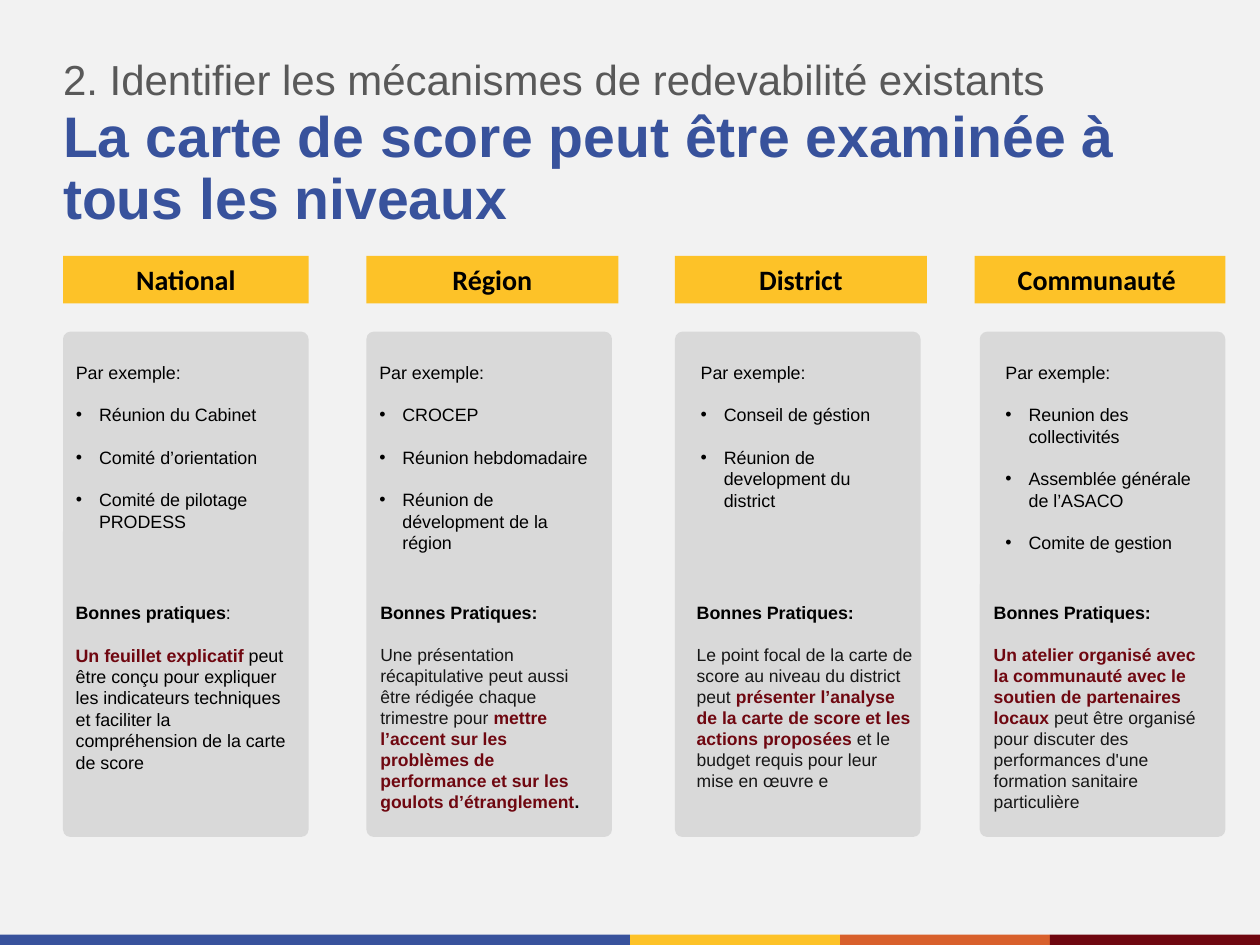
import pptx
import pptx.util
from pptx.dml.color import RGBColor
from pptx.enum.shapes import MSO_SHAPE
from pptx.enum.text import MSO_ANCHOR, MSO_AUTO_SIZE, PP_ALIGN
from pptx.oxml.ns import qn
from lxml import etree

WIDE, HIGH = pptx.util.Inches(9.8), pptx.util.Inches(7.35)
BLUE = RGBColor(0x38, 0x52, 0x9C)
GOLD = RGBColor(0xFD, 0xC2, 0x28)
RUST = RGBColor(0xD8, 0x60, 0x2C)
WINE = RGBColor(0x6F, 0x07, 0x10)
PALE = RGBColor(0xF2, 0xF2, 0xF2)
GREY = RGBColor(0xD9, 0xD9, 0xD9)
SLATE = RGBColor(0x59, 0x59, 0x59)
INK = RGBColor(0x16, 0x16, 0x16)
BLACK = RGBColor(0, 0, 0)

# All lengths are percent of the slide's width or height.
EDGE, CARD = 5, 19.49
HEAD_TOP, CARD_TOP, LIST_TOP, NOTE_TOP = 27.07, 35.1, 37.55, 63
GAP = pptx.util.Pt(11.8)

# Head: left, width, text. List: left, width, items.
# Note: left, size, colour, title runs, text runs; a run is (text, strong colour or None).
LEVELS = [
    dict(card=EDGE, head=(EDGE, CARD, "National"),
         list=(EDGE, CARD, ["Réunion du Cabinet", "Comité d’orientation",
                            "Comité de pilotage PRODESS"]),
         note=(EDGE, 10, BLACK, [("Bonnes pratiques", BLACK), (":", None)],
               [("Un feuillet explicatif ", WINE),
                ("peut être conçu pour expliquer les indicateurs techniques et "
                 "faciliter la compréhension de la carte de score", None)])),
    dict(card=29.08, head=(29.08, 20, "Région"),
         list=(29.08, CARD, ["CROCEP", "Réunion hebdomadaire",
                             "Réunion de dévelopment de la région"]),
         note=(29.18, 9.8, INK, [("Bonnes Pratiques:", BLACK)],
               [("Une présentation récapitulative peut aussi être rédigée "
                 "chaque trimestre pour ", None),
                ("mettre l’accent sur les problèmes de performance et sur les "
                 "goulots d’étranglement", WINE), (".", BLACK)])),
    dict(card=53.57, head=(53.57, 20, "District"),
         list=(54.59, 17.14, ["Conseil de géstion",
                              "Réunion de development du district"]),
         note=(54.29, 9.8, INK, [("Bonnes Pratiques:", BLACK)],
               [("Le point focal de la carte de score au niveau du district "
                 "peut ", None),
                ("présenter l’analyse de la carte de score et les actions "
                 "proposées ", WINE),
                ("et le budget requis pour leur mise en œuvre e", None)])),
    dict(card=77.76, head=(77.35, 19.9, "Communauté "),
         list=(78.78, 17.14, ["Reunion des collectivités",
                              "Assemblée générale de l’ASACO",
                              "Comite de gestion"]),
         note=(77.86, 9.8, INK, [("Bonnes Pratiques:", BLACK)],
               [("Un atelier organisé avec la communauté avec le soutien de "
                 "partenaires locaux", WINE),
                (" peut être organisé pour discuter des performances d'une "
                 "formation sanitaire particulière", None)])),
]


def area(left, top, width, height):
    """Turn percent shares into slide lengths."""
    return (int(WIDE * left / 100), int(HIGH * top / 100),
            int(WIDE * width / 100), int(HIGH * height / 100))


def move(shape, *shares):
    shape.left, shape.top, shape.width, shape.height = area(*shares)


def style(para, size, color, bold=False, face="Arial"):
    font = para.font
    font.name, font.size, font.bold = face, pptx.util.Pt(size), bold
    font.color.rgb = color


def setup(frame, inset=True):
    """Wrap the text from the top of a fixed box."""
    frame.word_wrap = True
    frame.auto_size = MSO_AUTO_SIZE.NONE
    frame.vertical_anchor = MSO_ANCHOR.TOP
    if not inset:
        frame.margin_left = frame.margin_right = 0
        frame.margin_top = frame.margin_bottom = 0


def add_block(slide, kind, color, *shares):
    block = slide.shapes.add_shape(kind, *area(*shares))
    block.shadow.inherit = False
    block.fill.solid()
    block.fill.fore_color.rgb = color
    block.line.fill.background()
    return block


def add_bands(slide):
    third = 50 / 3
    spans = [(0, 50, BLUE), (50, third, GOLD),
             (50 + third, third, RUST), (50 + 2 * third, third, WINE)]
    for left, width, color in spans:
        add_block(slide, MSO_SHAPE.RECTANGLE, color, left, 98.9, width, 1.1)


def fill_line(frame, text, size, color, bold):
    setup(frame, inset=False)
    para = frame.paragraphs[0]
    para.text = text
    para.alignment = PP_ALIGN.LEFT
    para.line_spacing = 0.9
    style(para, size, color, bold)


def add_head(slide, left, width, text):
    head = add_block(slide, MSO_SHAPE.RECTANGLE, GOLD, left, HEAD_TOP, width, 5.03)
    para = head.text_frame.paragraphs[0]
    para.text = text
    para.alignment = PP_ALIGN.CENTER
    style(para, 15.7, BLACK, True, "Calibri")


def set_bullet(para, mark):
    """Hang the paragraph on a mark, or clear the mark if it is empty."""
    props = para._p.get_or_add_pPr()
    hang = pptx.util.Inches(0.18) if mark else 0
    props.set("marL", str(hang))
    props.set("indent", str(-hang))
    if mark:
        face = etree.SubElement(props, qn("a:buFont"))
        face.set("typeface", "Arial")
        etree.SubElement(props, qn("a:buChar")).set("char", mark)
    else:
        etree.SubElement(props, qn("a:buNone"))


def fill_list(slide, holder, left, width, items):
    slide.shapes.element.append(holder.element)  # bring in front of the card
    move(holder, left, LIST_TOP, width, 25)
    frame = holder.text_frame
    setup(frame)
    for row, text in enumerate(["Par exemple:"] + items):
        para = frame.add_paragraph() if row else frame.paragraphs[0]
        para.text = text
        para.alignment = PP_ALIGN.LEFT
        para.space_before = GAP if row else 0
        set_bullet(para, "•" if row else "")
        style(para, 10, BLACK)


def add_note(slide, left, size, color, title, body):
    box = slide.shapes.add_textbox(*area(left, NOTE_TOP, 19.39, 24))
    frame = box.text_frame
    setup(frame)
    first, second = frame.paragraphs[0], frame.add_paragraph()
    second.space_before = GAP
    for para, runs, points in ((first, title, 10), (second, body, size)):
        style(para, points, color)
        for text, strong in runs:
            run = para.add_run()
            run.text = text
            run.font.bold = strong is not None
            run.font.color.rgb = strong or color


def main():
    deck = pptx.Presentation()
    deck.slide_width, deck.slide_height = WIDE, HIGH
    slide = deck.slides.add_slide(deck.slide_layouts.get_by_name("Comparison"))
    slide.background.fill.solid()
    slide.background.fill.fore_color.rgb = PALE
    title, *lists = slide.placeholders

    add_bands(slide)
    move(title, EDGE, 11.43, 93.47, 13.2)
    fill_line(title.text_frame, "La carte de score peut être examinée à tous les niveaux",
              32, BLUE, True)
    step = slide.shapes.add_textbox(*area(EDGE, 6.26, 90, 4.9))
    fill_line(step.text_frame, "2. Identifier les mécanismes de redevabilité existants",
              23.5, SLATE, False)

    for level, holder in zip(LEVELS, lists):
        add_head(slide, *level["head"])
        card = add_block(slide, MSO_SHAPE.ROUNDED_RECTANGLE, GREY,
                         level["card"], CARD_TOP, CARD, 53.47)
        card.adjustments[0] = 0.03
        fill_list(slide, holder, *level["list"])
        add_note(slide, *level["note"])
    deck.save("out.pptx")


if __name__ == "__main__":
    main()
